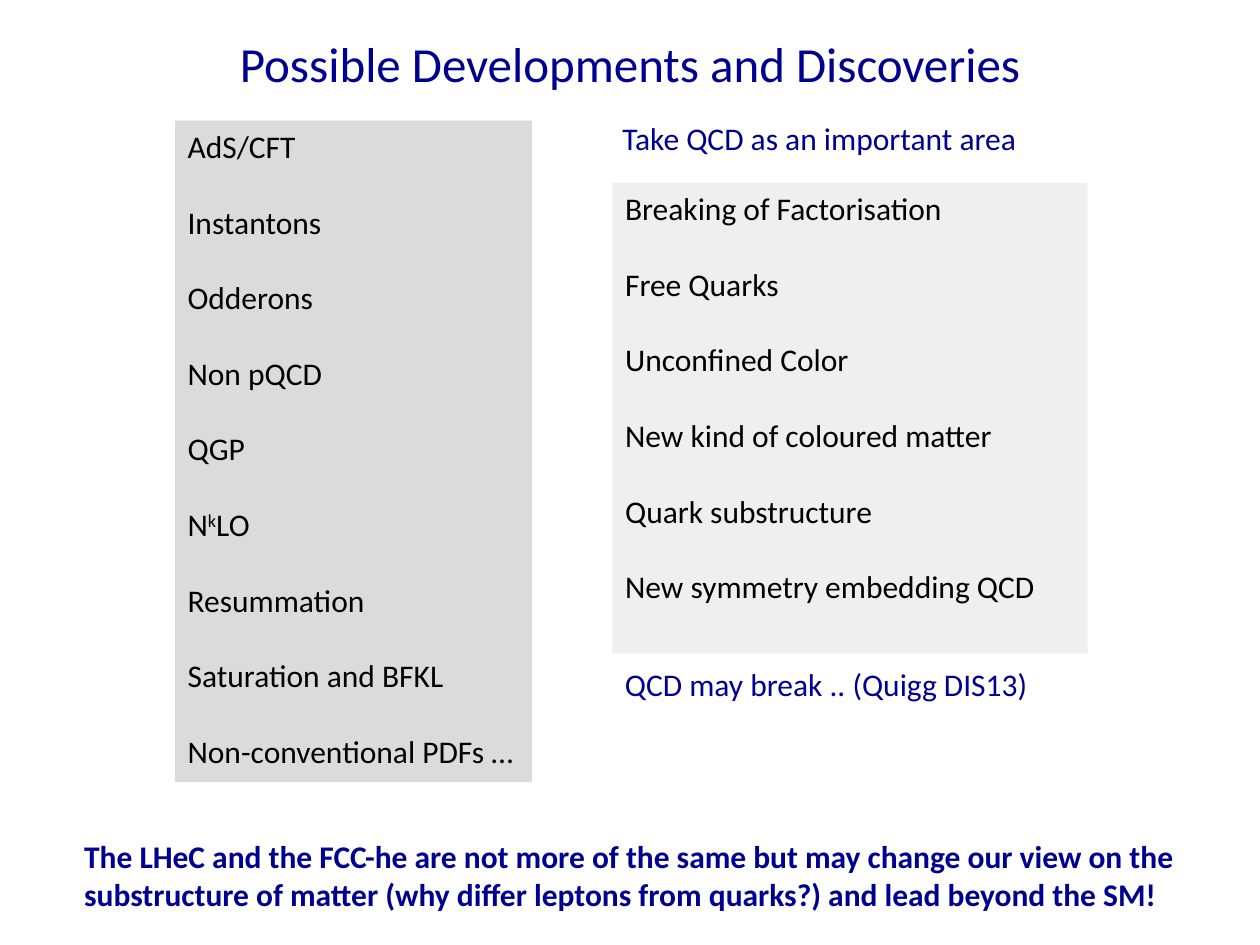
from lxml import etree
from pptx import Presentation
from pptx.dml.color import RGBColor
from pptx.enum import text
from pptx.oxml import ns
from pptx.util import Pt

NAVY = RGBColor(0x00, 0x00, 0x90)
BLACK = RGBColor(0x00, 0x00, 0x00)
GREY = RGBColor(0xA6, 0xA6, 0xA6)
FONT = "Calibri"
BODY_SIZE = Pt(18)
TOPIC_GAP = Pt(21.6)

KNOWN_TOPICS = [
    "AdS/CFT", "Instantons", "Odderons", "Non pQCD", "QGP", "N^k^LO",
    "Resummation", "Saturation and BFKL", "Non-conventional PDFs …",
]
QCD_SURPRISES = [
    "Breaking of Factorisation", "Free Quarks", "Unconfined Color",
    "New kind of coloured matter", "Quark substructure",
    "New symmetry embedding QCD",
]
CONCLUSION = [
    "The LHeC and the FCC-he are not more of the same but may change our view on the",
    "substructure of matter (why differ leptons from quarks?) and lead beyond the SM!",
]


def place(shape, left, top, width, height):
    shape.left, shape.top = Pt(left), Pt(top)
    shape.width, shape.height = Pt(width), Pt(height)


def style(font, color, size=BODY_SIZE, bold=False):
    font.name, font.size, font.bold = FONT, size, bold
    font.color.rgb = color


def fill_translucent(shape, color, opacity):
    """Fill with a colour at the given opacity in percent."""
    shape.fill.solid()
    shape.fill.fore_color.rgb = color
    rgb = shape.fill._xPr.find(".//" + ns.qn("a:srgbClr"))
    etree.SubElement(rgb, ns.qn("a:alpha"), val=str(opacity * 1000))


def set_title(title, wording):
    place(title, 36, 5, 648, 62)
    title.text_frame.text = wording
    title.text_frame.vertical_anchor = text.MSO_ANCHOR.MIDDLE
    heading = title.text_frame.paragraphs[0]
    heading.alignment = text.PP_ALIGN.CENTER
    style(heading.runs[0].font, NAVY, Pt(28))


def add_topic_runs(paragraph, topic):
    """Write a topic, raising whatever stands between carets."""
    for i, part in enumerate(topic.split("^")):
        run = paragraph.add_run()
        run.text = part
        style(run.font, BLACK)
        if i % 2:
            run._r.get_or_add_rPr().set("baseline", "30000")


def fill_topic_list(body, topics, box, color, opacity):
    place(body, *box)
    fill_translucent(body, color, opacity)
    frame = body.text_frame
    frame.auto_size = text.MSO_AUTO_SIZE.NONE
    frame.vertical_anchor = text.MSO_ANCHOR.TOP
    for i, topic in enumerate(topics):
        paragraph = frame.add_paragraph() if i else frame.paragraphs[0]
        properties = paragraph._p.get_or_add_pPr()
        properties.set("marL", "0")
        properties.set("indent", "0")
        etree.SubElement(properties, ns.qn("a:buNone"))
        paragraph.space_before = TOPIC_GAP if i else Pt(0)
        add_topic_runs(paragraph, topic)


def add_remark(slide, lines, box, bold=False):
    remark = slide.shapes.add_textbox(*(Pt(length) for length in box))
    frame = remark.text_frame
    frame.word_wrap = True
    frame.text = "\n".join(lines)
    for paragraph in frame.paragraphs:
        style(paragraph.runs[0].font, NAVY, bold=bold)


def main():
    deck = Presentation()
    deck.slide_width, deck.slide_height = Pt(720), Pt(540)
    slide = deck.slides.add_slide(deck.slide_layouts.get_by_name("Two Content"))
    title, known, surprises = slide.placeholders

    set_title(title, "Possible Developments and Discoveries")
    fill_topic_list(known, KNOWN_TOPICS, (100, 69, 204, 378), BLACK, 14)
    fill_topic_list(surprises, QCD_SURPRISES, (350, 104.5, 271.5, 269), GREY, 17)
    add_remark(slide, ["QCD may break .. (Quigg DIS13)"], (350, 376.5, 248, 29))
    add_remark(slide, CONCLUSION, (41, 475, 646, 51), bold=True)
    add_remark(slide, ["Take QCD as an important area"], (348.5, 64.5, 245, 29))

    deck.save("out.pptx")


if __name__ == "__main__":
    main()
